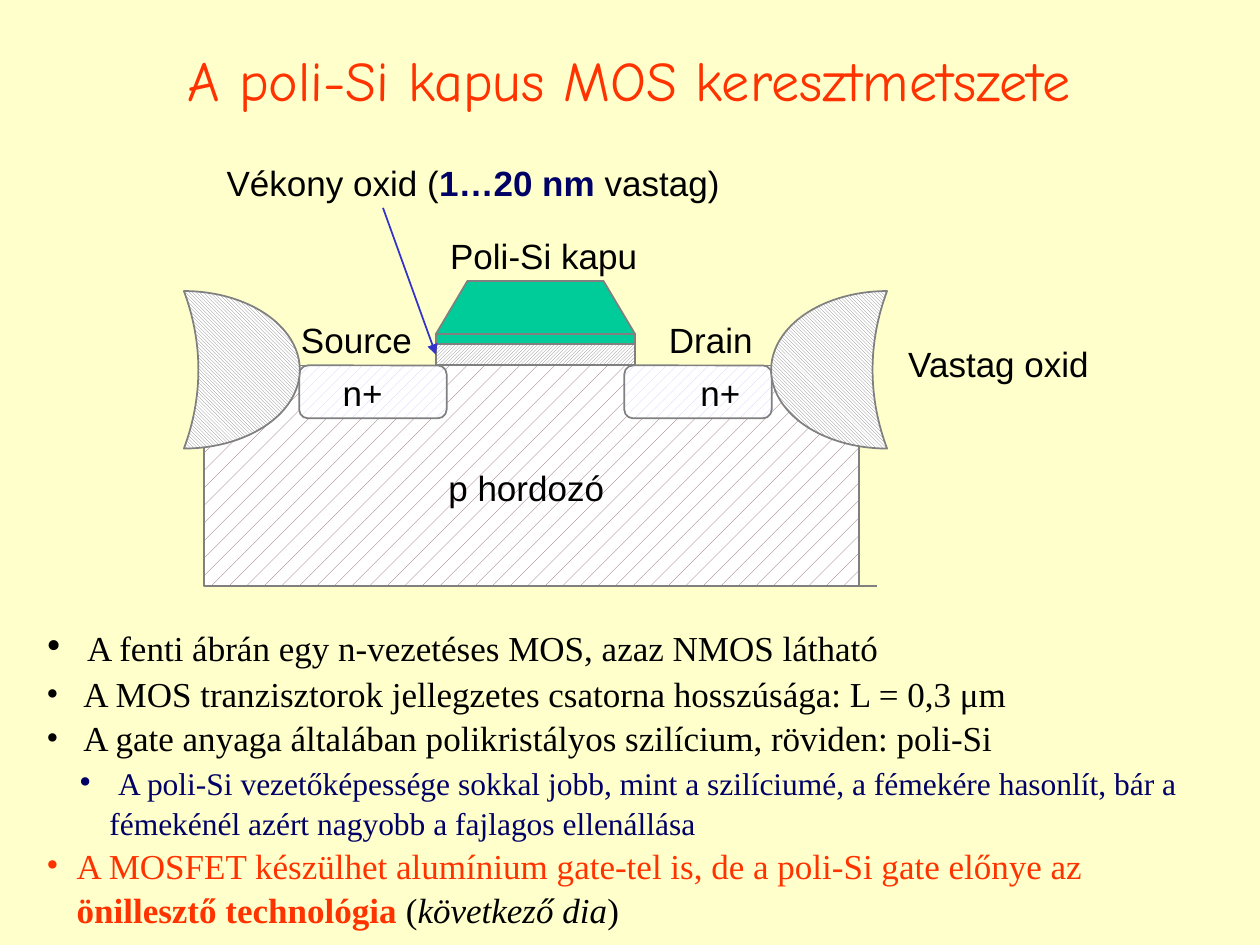
"""Build the slide on the cross-section of a poly-Si gate MOS transistor."""
from lxml import etree
from pptx import Presentation
from pptx.dml.color import RGBColor
from pptx.enum.dml import MSO_PATTERN
from pptx.enum.shapes import MSO_CONNECTOR, MSO_SHAPE
from pptx.enum.text import MSO_ANCHOR, PP_ALIGN
from pptx.oxml.ns import qn
from pptx.util import Inches, Pt

RECT, ROUNDED, MOON = MSO_SHAPE.RECTANGLE, MSO_SHAPE.ROUNDED_RECTANGLE, MSO_SHAPE.MOON
DOTS, DENSE_DOTS = MSO_PATTERN.PERCENT_5, MSO_PATTERN.PERCENT_20
DOWN, UP = MSO_PATTERN.LIGHT_DOWNWARD_DIAGONAL, MSO_PATTERN.LIGHT_UPWARD_DIAGONAL
STRAIGHT = MSO_CONNECTOR.STRAIGHT
LEFT, CENTER = PP_ALIGN.LEFT, PP_ALIGN.CENTER
TOP, MIDDLE = MSO_ANCHOR.TOP, MSO_ANCHOR.MIDDLE

CREAM = RGBColor(0xFF, 0xFF, 0xCC)
RED = RGBColor(0xFF, 0x33, 0x00)
BLACK = RGBColor(0x00, 0x00, 0x00)
NAVY = RGBColor(0x00, 0x00, 0x66)
BLUE = RGBColor(0x33, 0x33, 0xCC)
GREEN = RGBColor(0x00, 0xCC, 0x99)
GREY = RGBColor(0x80, 0x80, 0x80)
WHITE = RGBColor(0xFF, 0xFF, 0xFF)
LILAC = RGBColor(0xCC, 0xCC, 0xFF)
MAUVE = RGBColor(0x82, 0x56, 0x5E)

CELL = Inches(0.1)
SANS, SERIF, COMIC = "Arial", "Times New Roman", "Comic Neue"

prs = Presentation()
prs.slide_width, prs.slide_height = 100 * CELL, 75 * CELL
slide = prs.slides.add_slide(prs.slide_layouts[6])
slide.background.fill.solid()
slide.background.fill.fore_color.rgb = CREAM
shapes = slide.shapes


def grid(*cells):
    return [round(cell * CELL) for cell in cells]


def write(paragraph, runs, font):
    for text, size, color, bold, italic in runs:
        run = paragraph.add_run()
        run.text = text
        run.font.name, run.font.size = font, Pt(size)
        run.font.color.rgb = color
        run.font.bold, run.font.italic = bold, italic


axis, surface = 42.5, 29
gate_half, drain_half, oxide_half = 7.9, 18.75, 27.9
gate_left, gate_right = axis - gate_half, axis + gate_half
n_width, n_height, moon_width, moon_height = 11.7, 4.2, 9.2, 12.5

regions = [
    (RECT, 16.2, surface, 52, 17.5, DOTS, MAUVE),
    (ROUNDED, axis + drain_half - n_width, surface, n_width, n_height, DENSE_DOTS, LILAC),
    (ROUNDED, axis - drain_half, surface, n_width, n_height, DENSE_DOTS, LILAC),
    (MOON, axis - oxide_half, 23.1, moon_width, moon_height, DOWN, GREY),
    (MOON, axis + oxide_half - moon_width, 23.1, moon_width, moon_height, DOWN, GREY),
    (RECT, gate_left, surface - 1.7, 2 * gate_half, 1.7, UP, GREY),
    (RECT, gate_left, surface - 2.5, 2 * gate_half, 0.8, None, GREEN),
]
drawn = []
for kind, x, y, width, height, pattern, color in regions:
    region = shapes.add_shape(kind, *grid(x, y, width, height))
    if pattern is None:
        region.fill.solid()
    else:
        region.fill.patterned()
        region.fill.pattern = pattern
        region.fill.back_color.rgb = WHITE
    region.fill.fore_color.rgb = color
    if kind == MOON:
        region.adjustments[0] = 0.875
    drawn.append(region)
drawn[3]._element.spPr.find(qn("a:xfrm")).set("flipH", "1")
thin_oxide = drawn[5]

outline = shapes.build_freeform(*grid(gate_left, surface - 2.5))
outline.add_line_segments([
    grid(gate_left + 2.5, 22.3),
    grid(gate_right - 2.5, 22.3),
    grid(gate_right, surface - 2.5),
])
poly_gate = outline.convert_to_shape()
poly_gate.fill.solid()
poly_gate.fill.fore_color.rgb = GREEN
for region in drawn + [poly_gate]:
    region.shadow.inherit = False
    region.line.color.rgb = GREY
    region.line.width = Pt(1)

edges = [
    (axis - drain_half, surface, gate_left, surface, GREY),
    (17.1, 46.5, 69.6, 46.5, GREY),
    (gate_right, surface, axis + drain_half, surface, GREY),
    (30.4, 16.5, gate_left, 28.1, BLUE),
]
for *ends, color in edges:
    edge = shapes.add_connector(STRAIGHT, *grid(*ends))
    edge.line.color.rgb = color
    edge.line.width = Pt(1)
    if color == BLUE:
        edge.end_connect(thin_oxide, 1)
        etree.SubElement(edge.line._get_or_add_ln(), qn("a:tailEnd"), type="triangle")
    etree.SubElement(edge._element.spPr, qn("a:effectLst"))

labels = [
    ("n+", 26.2, 29, 7.5, LEFT),
    ("Source", 22.9, 24.8, 10.8, LEFT),
    ("Drain", 52.1, 24.8, 10.8, LEFT),
    ("p hordozó", 34.6, 36.5, 20.8, LEFT),
    ("Vastag oxid", 69.8, 26.7, 18.9, CENTER),
    ("n+", 54.6, 29, 7.5, LEFT),
    ("Poli-Si kapu", 34.6, 18.1, 17.1, CENTER),
]
captions = [
    ([(text, 20, BLACK, False, False)], SANS, (x, y, width, 4.3), align, TOP)
    for text, x, y, width, align in labels
]
captions += [
    ([("Vékony oxid (", 20, BLACK, False, False),
      ("1…20 nm", 20, NAVY, True, False),
      (" vastag)", 20, BLACK, False, False)], SANS, (17, 12.3, 43.2, 4.3), LEFT, TOP),
    ([("A poli-Si kapus MOS keresztmetszete", 32, RED, False, False)],
     COMIC, (2.7, 0, 94.5, 12.5), CENTER, MIDDLE),
]
for runs, font, place, align, anchor in captions:
    frame = shapes.add_textbox(*grid(*place)).text_frame
    frame.word_wrap = True
    frame.vertical_anchor = anchor
    frame.paragraphs[0].alignment = align
    write(frame.paragraphs[0], runs, font)

remarks = [
    (0, [(" ", 24, BLACK, False, False),
         ("A fenti ábrán egy n-vezetéses MOS, azaz NMOS látható", 20, BLACK, False, False)]),
    (0, [(" A MOS tranzisztorok jellegzetes csatorna hosszúsága: L = 0,3 μm",
          20, BLACK, False, False)]),
    (0, [(" A gate anyaga általában polikristályos szilícium, röviden: poli-Si",
          20, BLACK, False, False)]),
    (1, [(" ", 20, NAVY, False, False),
         ("A poli-Si vezetőképessége sokkal jobb, mint a szilíciumé, a fémekére hasonlít, "
          "bár a fémekénél azért nagyobb a fajlagos ellenállása", 18, NAVY, False, False)]),
    (0, [("A MOSFET készülhet alumínium gate-tel is, de a poli-Si gate előnye az ",
          20, RED, False, False),
         ("önillesztő technológia", 20, RED, True, False),
         (" (", 20, BLACK, False, False),
         ("következő dia", 20, BLACK, False, True),
         (")", 20, BLACK, False, False)]),
]
frame = shapes.add_textbox(*grid(2.7, 48.5, 93.7, 24.7)).text_frame
frame.word_wrap = True
for index, (level, runs) in enumerate(remarks):
    remark = frame.add_paragraph() if index else frame.paragraphs[0]
    remark.level = level
    remark.line_spacing = 1.05
    write(remark, runs, SERIF)
    properties = remark._p.get_or_add_pPr()
    properties.set("marL", str(Inches(0.5 if level else 0.24)))
    properties.set("indent", str(-Inches(0.24)))
    etree.SubElement(properties, qn("a:buFont"), typeface=SERIF)
    etree.SubElement(properties, qn("a:buChar"), char="•")

prs.save("out.pptx")
